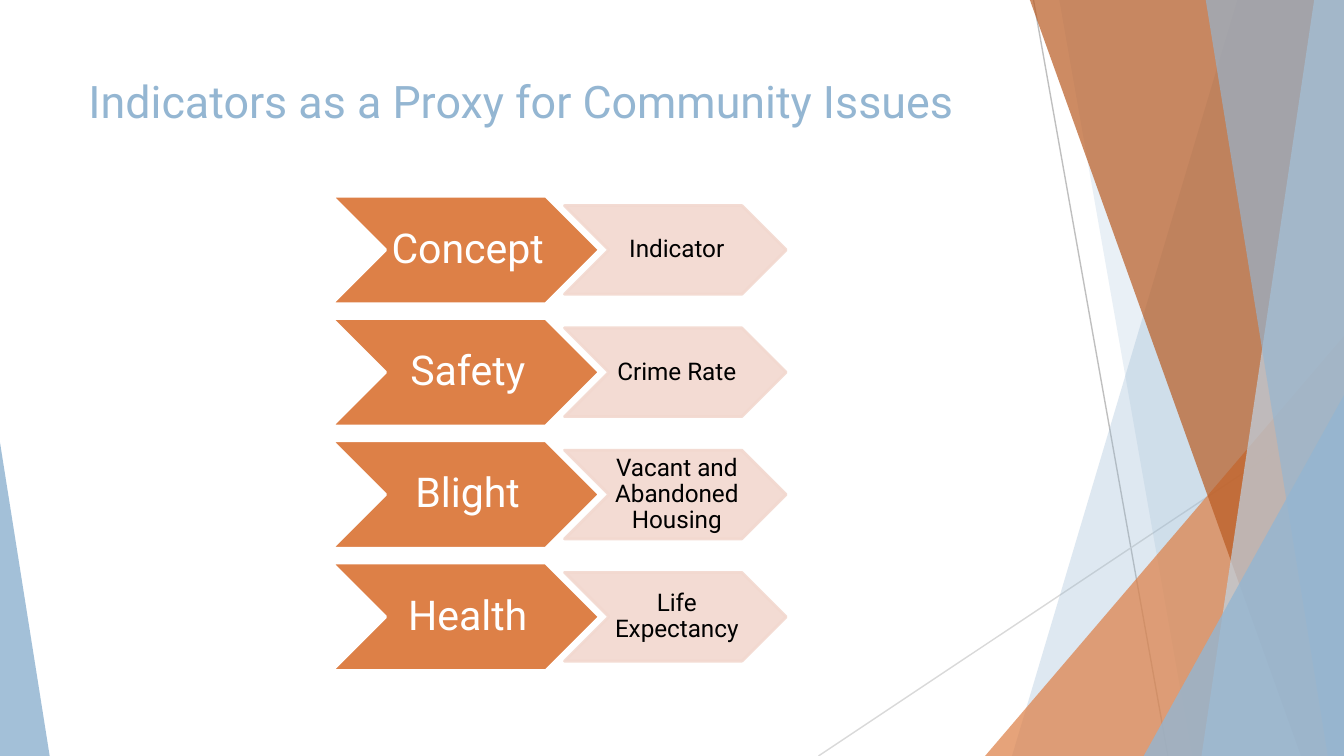
from lxml import etree
from pptx import Presentation
from pptx.dml.color import RGBColor
from pptx.enum import shapes, text
from pptx.oxml.ns import qn
from pptx.util import Inches, Pt

WIDTH = 10
HEIGHT = WIDTH * 9 / 16
BLUE, ORANGE, PALE_ORANGE = "94B6D2", "DD8047", "F2D8CF"
FONT = "Roboto"


def paint(color_format, color, opacity=100):
    """Colour a fill or line fill, adding an alpha element when see-through."""
    color_format.solid()
    color_format.fore_color.rgb = RGBColor.from_string(color)
    if opacity < 100:
        element = color_format._xPr.find(qn("a:solidFill"))[0]
        etree.SubElement(element, qn("a:alpha")).set("val", str(opacity * 1000))


def add_ray(slide, start, end, color):
    ray = slide.shapes.add_connector(
        shapes.MSO_CONNECTOR.STRAIGHT, *map(Inches, start + end))
    paint(ray.line.fill, color)
    ray.line.width = Pt(0.75)
    etree.SubElement(ray._element.spPr, qn("a:effectLst"))


def add_band(slide, top_left, bottom_left, color, opacity):
    """Add a full-height band with a slanted left edge, reaching the right edge."""
    top = -0.01
    corners = [(top_left, top), (WIDTH, top), (WIDTH, HEIGHT), (bottom_left, HEIGHT)]
    points = [(Inches(x), Inches(y)) for x, y in corners]
    builder = slide.shapes.build_freeform(*points[0], scale=1.0)
    builder.add_line_segments(points[1:], close=True)
    band = builder.convert_to_shape()
    band.shadow.inherit = False
    paint(band.fill, color, opacity)
    band.line.fill.background()


def add_corner(slide, left, top, width, apex, color, opacity):
    """Add a triangle on the bottom edge; apex 0 is at its left, 1 at its right."""
    corner = slide.shapes.add_shape(
        shapes.MSO_SHAPE.ISOSCELES_TRIANGLE,
        *map(Inches, (left, top, width, HEIGHT - top)))
    corner.adjustments[0] = apex
    corner.shadow.inherit = False
    paint(corner.fill, color, opacity)
    corner.line.fill.background()


def add_backdrop(slide):
    add_ray(slide, (7.69, 0), (8.69, HEIGHT), "BFBFBF")
    add_ray(slide, (WIDTH, 3.02), (6.09, HEIGHT), "D9D9D9")
    add_band(slide, 9.21, 7.53, BLUE, 30)
    add_band(slide, 7.88, 8.87, BLUE, 20)
    add_corner(slide, 7.33, 2.5, 2.67, 1, ORANGE, 72)
    add_band(slide, 7.66, 9.68, "B95B22", 70)
    add_band(slide, 9.78, 8.94, "BFD3E4", 70)
    add_band(slide, 8.97, 9.88, BLUE, 65)
    add_corner(slide, 8.51, 2.94, 1.49, 1, BLUE, 80)
    add_corner(slide, 0, 3.29, 0.37, 0, BLUE, 85)


def set_font(paragraph, size, color):
    paragraph.font.name = FONT
    paragraph.font.size = Pt(size)
    paragraph.font.color.rgb = RGBColor.from_string(color)


def add_title(slide, left, top, width, height, title):
    box = slide.shapes.add_textbox(*map(Inches, (left, top, width, height)))
    box.text_frame.word_wrap = True
    box.text_frame.text = title
    set_font(box.text_frame.paragraphs[0], 24, BLUE)


def add_chevron(slide, box, label, size, text_color, fill, line, opacity, inset):
    chevron = slide.shapes.add_shape(shapes.MSO_SHAPE.CHEVRON, *map(Inches, box))
    chevron.shadow.inherit = False
    paint(chevron.fill, fill, opacity)
    paint(chevron.line.fill, line, opacity)
    chevron.line.width = Pt(1.5)
    frame = chevron.text_frame
    frame.word_wrap = True
    frame.vertical_anchor = text.MSO_ANCHOR.MIDDLE
    frame.margin_left, frame.margin_right = Inches(inset), 0
    frame.margin_top = frame.margin_bottom = Inches(0.01)
    frame.text = label
    paragraph = frame.paragraphs[0]
    paragraph.alignment = text.PP_ALIGN.CENTER
    paragraph.line_spacing = 0.9
    set_font(paragraph, size, text_color)


def add_indicator_list(slide, left, top, rows):
    """Stack rows that pair a concept chevron with a smaller indicator chevron."""
    pitch = 0.91
    for index, (concept, indicator) in enumerate(rows):
        row_top = top + index * pitch
        add_chevron(slide, (left, row_top, 1.99, 0.8), concept,
                    22, "FFFFFF", ORANGE, "FFFFFF", 100, 0.03)
        add_chevron(slide, (left + 1.73, row_top + 0.07, 1.65, 0.66), indicator,
                    13, "000000", PALE_ORANGE, PALE_ORANGE, 90, 0.02)


def main():
    presentation = Presentation()
    presentation.slide_width = Inches(WIDTH)
    presentation.slide_height = Inches(HEIGHT)
    slide = presentation.slides.add_slide(presentation.slide_layouts[6])
    add_backdrop(slide)
    add_title(slide, 0.56, 0.5, 7.05, 1.08, "Indicators as a Proxy for Community Issues")
    add_indicator_list(slide, 2.47, 1.46, [
        ("Concept", "Indicator"),
        ("Safety", "Crime Rate"),
        ("Blight", "Vacant and Abandoned Housing"),
        ("Health", "Life Expectancy"),
    ])
    presentation.save("out.pptx")


if __name__ == "__main__":
    main()
